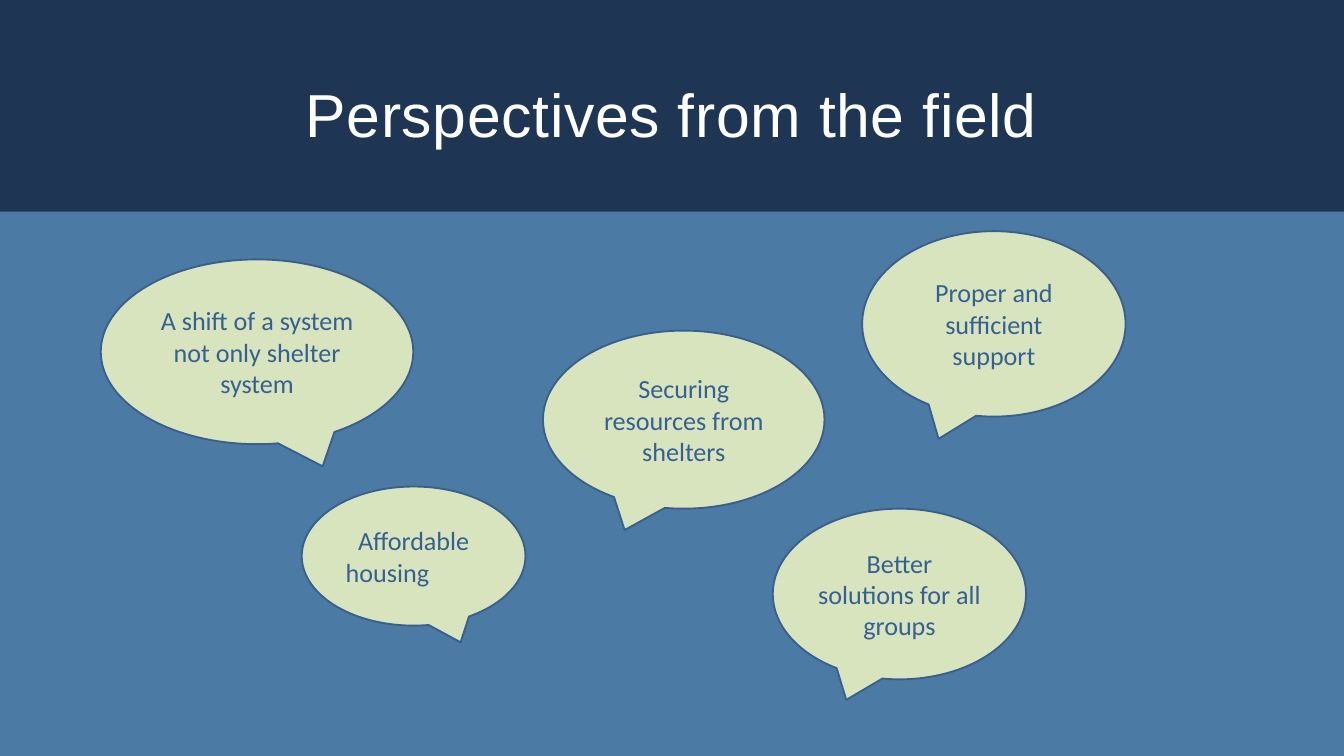
from dataclasses import dataclass

from pptx import Presentation
from pptx.dml.color import RGBColor
from pptx.enum.shapes import MSO_SHAPE
from pptx.enum.text import MSO_ANCHOR, MSO_AUTO_SIZE, PP_ALIGN
from pptx.slide import Slide
from pptx.util import Inches, Pt


@dataclass(frozen=True)
class Theme:
    background: RGBColor = RGBColor.from_string("4B7BA5")
    banner: RGBColor = RGBColor.from_string("1E3653")
    title: RGBColor = RGBColor.from_string("FFFFFF")
    bubble: RGBColor = RGBColor.from_string("D7E4BD")
    outline: RGBColor = RGBColor.from_string("3A5F8C")
    text: RGBColor = RGBColor.from_string("376092")
    title_font: str = "Arial"
    body_font: str = "Calibri"
    title_size: int = 65
    body_size: int = 28
    outline_width: int = 2


@dataclass(frozen=True)
class Bubble:
    lines: tuple[str, ...]
    left: float
    top: float
    width: float
    height: float
    tail_right: bool = False
    last_indent: float = 0


THEME = Theme()
TAIL_X = 0.21
TAIL_Y = 0.62

BUBBLES = (
    Bubble(("A shift of a system not only shelter system",), 1.5, 3.86, 4.65, 2.75, True),
    Bubble(("Securing resources from shelters",), 8.08, 4.92, 4.19, 2.65),
    Bubble(("Affordable", "housing"), 4.49, 7.24, 3.33, 2.07, True, 0.78),
    Bubble(("Better solutions for all groups",), 11.5, 7.57, 3.77, 2.54),
    Bubble(("Proper and sufficient support",), 12.83, 3.44, 3.92, 2.76),
)


def add_banner(s: Slide) -> None:
    sp = s.shapes.add_shape(
        MSO_SHAPE.RECTANGLE, 0, Inches(-0.2), Inches(20), Inches(3.35)
    )
    sp.shadow.inherit = False
    sp.fill.solid()
    sp.fill.fore_color.rgb = THEME.banner
    sp.line.fill.background()


def set_title(s: Slide, text: str) -> None:
    sp = s.shapes.title
    sp.left, sp.top = Inches(2.22), Inches(0.94)
    sp.width, sp.height = Inches(15.56), Inches(1.23)
    s.shapes._spTree.append(sp._element)
    tf = sp.text_frame
    tf.margin_left = tf.margin_right = tf.margin_top = tf.margin_bottom = 0
    tf.vertical_anchor = MSO_ANCHOR.TOP
    tf.auto_size = MSO_AUTO_SIZE.NONE
    tf.word_wrap = True
    p = tf.paragraphs[0]
    p.alignment = PP_ALIGN.CENTER
    p.line_spacing = Pt(93)
    p.space_before = Pt(0)
    r = p.add_run()
    r.text = text
    r.font.name = THEME.title_font
    r.font.size = Pt(THEME.title_size)
    r.font.color.rgb = THEME.title
    r._r.get_or_add_rPr().set("spc", "70")


def add_bubble(s: Slide, bubble: Bubble) -> None:
    sp = s.shapes.add_shape(
        MSO_SHAPE.OVAL_CALLOUT,
        Inches(bubble.left),
        Inches(bubble.top),
        Inches(bubble.width),
        Inches(bubble.height),
    )
    sp.adjustments[0] = TAIL_X if bubble.tail_right else -TAIL_X
    sp.adjustments[1] = TAIL_Y
    sp.shadow.inherit = False
    sp.fill.solid()
    sp.fill.fore_color.rgb = THEME.bubble
    sp.line.color.rgb = THEME.outline
    sp.line.width = Pt(THEME.outline_width)
    tf = sp.text_frame
    tf.word_wrap = True
    tf.vertical_anchor = MSO_ANCHOR.MIDDLE
    for i, line in enumerate(bubble.lines):
        p = tf.add_paragraph() if i else tf.paragraphs[0]
        p.alignment = PP_ALIGN.CENTER
        r = p.add_run()
        r.text = line
        r.font.name = THEME.body_font
        r.font.size = Pt(THEME.body_size)
        r.font.color.rgb = THEME.text
    if bubble.last_indent:
        p._p.get_or_add_pPr().set("marR", str(Inches(bubble.last_indent)))


def main() -> None:
    prs = Presentation()
    prs.slide_width, prs.slide_height = Inches(20), Inches(11.25)
    s = prs.slides.add_slide(prs.slide_layouts[5])
    s.background.fill.solid()
    s.background.fill.fore_color.rgb = THEME.background
    add_banner(s)
    set_title(s, "Perspectives from the field")
    for bubble in BUBBLES:
        add_bubble(s, bubble)
    prs.save("out.pptx")


if __name__ == "__main__":
    main()
